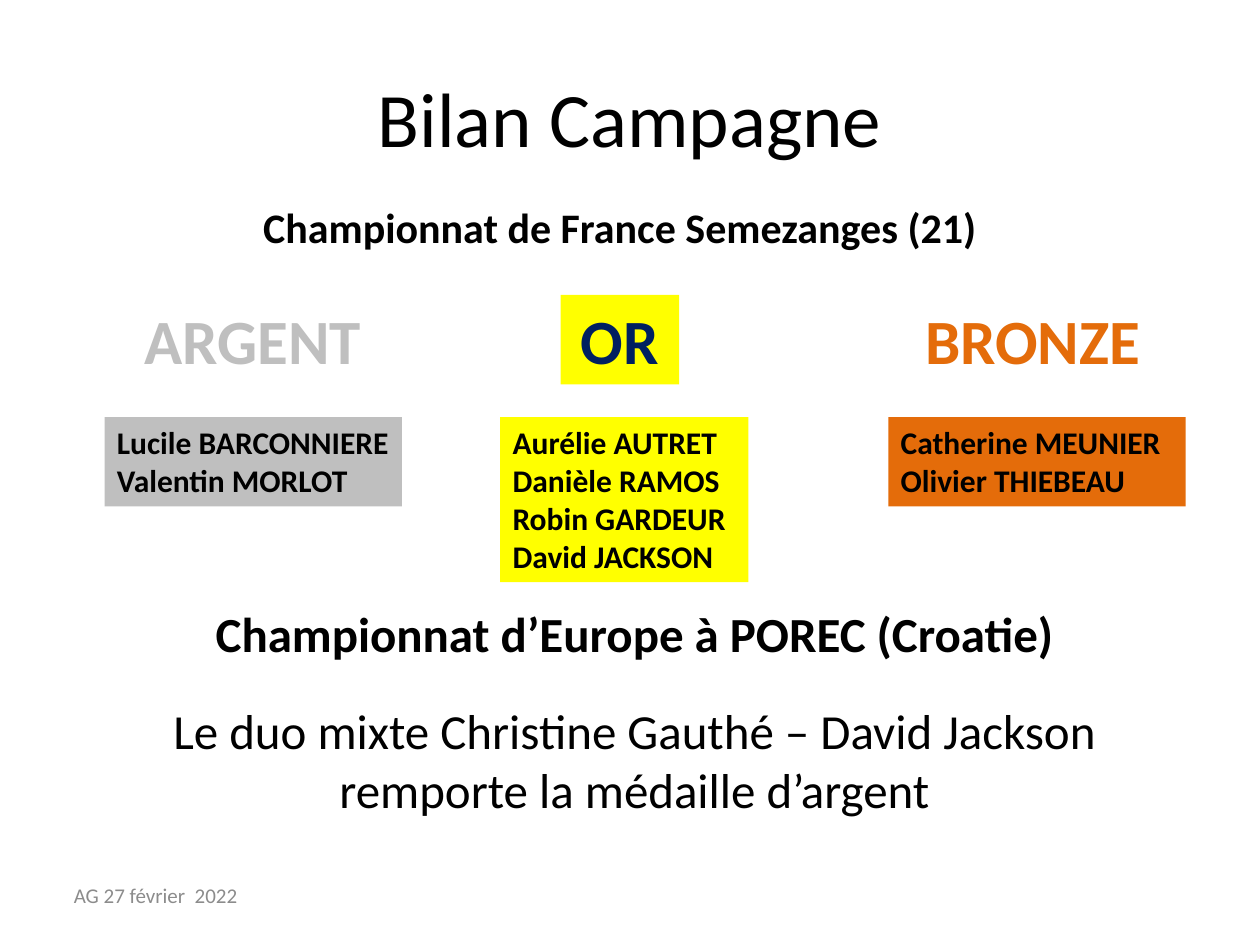
from pptx import Presentation, util as u
from pptx.dml.color import RGBColor
from pptx.enum import text as t

theme = {
    "font": "Calibri",
    "black": "000000", "navy": "002060", "grey": "8C8C8C",
    "gold": "FFFF00", "silver": "BFBFBF", "bronze": "E46C0A",
    "title": 44, "medal": 36, "event": 28, "place": 24, "name": 18, "foot": 12,
}

deck = Presentation()
deck.slide_width, deck.slide_height = u.Inches(10), u.Inches(7.5)
col = deck.slide_width / 10
row = deck.slide_height / 7.5
slide = deck.slides.add_slide(deck.slide_layouts[5])


def write(box, lines, size, ink="black", bold=True, align=t.PP_ALIGN.CENTER):
    frame = box.text_frame
    frame.text = "\n".join(lines)
    frame.word_wrap = True
    for para in frame.paragraphs:
        para.alignment = align
        for run in para.runs:
            font = run.font
            font.name = theme["font"]
            font.size = u.Pt(theme[size])
            font.bold = bold
            font.color.rgb = RGBColor.from_string(theme[ink])
    return frame


def add(x, y, w, h, fill=None):
    box = slide.shapes.add_textbox(*map(int, (x * col, y * row, w * col, h * row)))
    if fill:
        box.fill.solid()
        box.fill.fore_color.rgb = RGBColor.from_string(theme[fill])
    return box


title = slide.shapes.title
title.left, title.top = int(0.5 * col), int(0.3 * row)
title.width, title.height = int(9 * col), int(1.25 * row)
frame = write(title, ["Bilan Campagne"], "title", bold=False)
frame.vertical_anchor = t.MSO_ANCHOR.MIDDLE

place = add(1.99, 1.55, 5.92, 0.5)
frame = write(place, ["Championnat de France Semezanges (21)"], "place", align=t.PP_ALIGN.LEFT)
frame.word_wrap = False

medals = [
    ("OR", "gold", "navy", "gold", 4.45, 0.94, 3.97, 1.97, 1.31,
     ["Aurélie AUTRET", "Danièle RAMOS", "Robin GARDEUR", "David JACKSON"]),
    ("ARGENT", None, "silver", "silver", 0.98, 2.05, 0.83, 2.36, 0.71,
     ["Lucile BARCONNIERE", "Valentin MORLOT"]),
    ("BRONZE", None, "bronze", "bronze", 7.17, 2.05, 7.05, 2.36, 0.71,
     ["Catherine MEUNIER", "Olivier THIEBEAU"]),
]
for medal, back, ink, fill, left, wide, x, w, h, names in medals:
    write(add(x, 3.31, w, h, fill), names, "name", align=t.PP_ALIGN.LEFT)
    write(add(left, 2.34, wide, 0.71, back), [medal], "medal", ink)

foot = add(0.33, 6.95, 1.81, 0.31)
frame = write(foot, ["AG 27 février  2022"], "foot", "grey", False)
frame.vertical_anchor = t.MSO_ANCHOR.MIDDLE

event = add(0.98, 4.74, 8.11, 2.76)
frame = write(event, [
    "Championnat d’Europe à POREC (Croatie)",
    "Le duo mixte Christine Gauthé – David Jackson",
    "remporte la médaille d’argent",
], "event", bold=False)
head, duo, _ = frame.paragraphs
head.runs[0].font.bold = True
duo.space_before = u.Pt(22)

deck.save("out.pptx")
